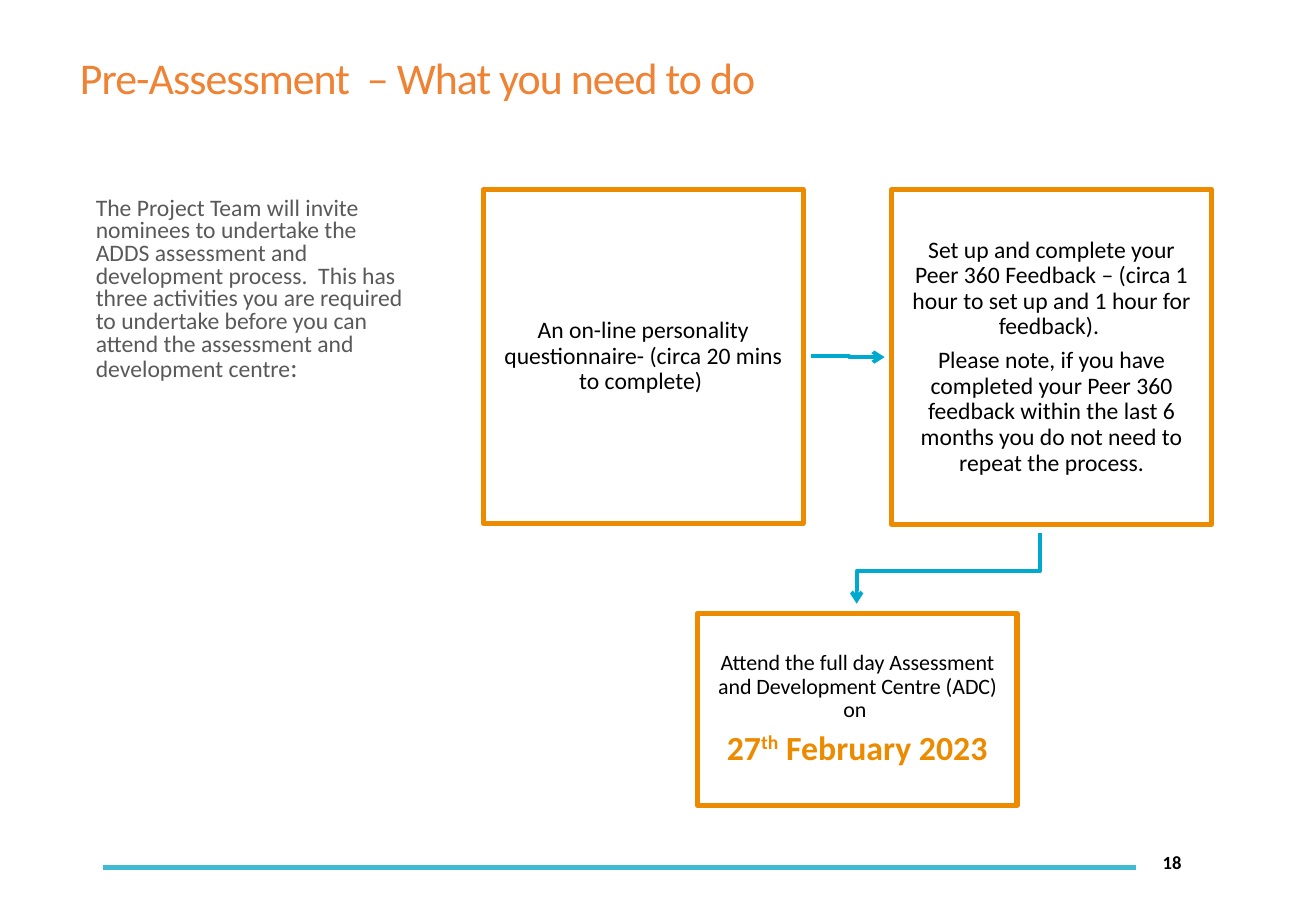
"""Build the pre-assessment slide with its three activity boxes."""
from dataclasses import dataclass

from lxml import etree
from pptx import Presentation, util as u
from pptx.dml.color import RGBColor
from pptx.enum import shapes, text
from pptx.oxml.ns import qn

PX = u.Inches(1) // 100
SLIDE_SIZE = (1083, 750)


@dataclass(frozen=True)
class Theme:
    font: str = "Calibri"
    title: str = "EF8233"
    body: str = "595959"
    ink: str = "000000"
    paper: str = "FFFFFF"
    border: str = "ED8B00"
    arrow: str = "00A9CE"
    rule: str = "40BAD2"
    title_size: int = 26
    date_size: int = 20
    colon_size: int = 16
    body_size: int = 14
    small_size: int = 13
    number_size: int = 11
    border_width: float = 3
    arrow_width: float = 2.25


THEME = Theme()
STYLES = {
    "title": dict(size=THEME.title_size, color=THEME.title, spc=-60),
    "body": dict(size=THEME.body_size, color=THEME.body),
    "colon": dict(size=THEME.colon_size, color=THEME.body),
    "step": dict(size=THEME.body_size, color=THEME.ink),
    "small": dict(size=THEME.small_size, color=THEME.ink),
    "date": dict(size=THEME.date_size, color=THEME.border, bold=True),
    "ordinal": dict(size=THEME.date_size, color=THEME.border, bold=True, baseline=30000),
    "number": dict(size=THEME.number_size, color=THEME.ink, bold=True),
}

TEXTS = [
    ((56, 40, 649, 47), "middle", 1,
     [[("Pre-Assessment  – What you need to do", "title")]]),
    ((69, 158, 280, 165), "top", 0.8,
     [[("The Project Team will invite nominees to undertake the ADDS assessment and "
        "development process.  This has three activities you are required to undertake "
        "before you can attend the assessment and development centre", "body"),
       (":", "colon")]]),
    ((947, 690, 136, 40), "middle", 1, [[("18", "number")]]),
]
STEP_WIDTH = 263
STEPS = [
    ((398, 156), 275,
     [[("An on-line personality questionnaire- (circa 20 mins to complete) ", "step")]]),
    ((734, 156), 276,
     [[("Set up and complete your Peer 360 Feedback – (circa 1 hour to set up and "
        "1 hour for feedback). ", "step")],
      [("Please note, if you have completed your Peer 360 feedback within the last "
        "6 months you do not need to repeat the process.", "step")]]),
    ((574, 505), 158,
     [[("Attend the full day Assessment and Development Centre (ADC) on ", "small")],
      [("27", "date"), ("th", "ordinal"), (" February 2023", "date")]]),
]
ARROWS = [
    [(667, 293), (699, 293), (699, 294), (728, 294)],
    [(856, 439), (856, 470), (705, 470), (705, 497)],
]
FOOTER_RULE = (85, 714, 935, 714)


def emu(lengths):
    return [length * PX for length in lengths]


def style_line(line, color, width):
    line.color.rgb = RGBColor.from_string(color)
    line.width = u.Pt(width)


def format_run(run, size, color, bold=False, **attributes):
    run.font.name = THEME.font
    run.font.size = u.Pt(size)
    run.font.bold = bold
    run.font.color.rgb = RGBColor.from_string(color)
    for name, value in attributes.items():
        run._r.get_or_add_rPr().set(name, str(value))


def write(frame, paragraphs, anchor, spacing, inset, align, after=0):
    frame.word_wrap = True
    frame.vertical_anchor = anchor
    frame.margin_left, frame.margin_top, frame.margin_right, frame.margin_bottom = emu(inset)
    for index, pieces in enumerate(paragraphs):
        paragraph = frame.add_paragraph() if index else frame.paragraphs[0]
        paragraph.alignment = align
        paragraph.line_spacing = spacing
        paragraph.space_after = u.Pt(after)
        for words, style in pieces:
            run = paragraph.add_run()
            run.text = words
            format_run(run, **STYLES[style])


def add_text(slide, box, anchor, spacing, paragraphs):
    shape = slide.shapes.add_textbox(*emu(box))
    write(shape.text_frame, paragraphs, text.MSO_ANCHOR[anchor.upper()], spacing,
          (10, 5, 10, 5), text.PP_ALIGN.LEFT)


def add_step(slide, corner, height, paragraphs):
    shape = slide.shapes.add_shape(
        shapes.MSO_SHAPE.RECTANGLE, *emu((*corner, STEP_WIDTH, height)))
    shape.shadow.inherit = False
    shape.fill.solid()
    shape.fill.fore_color.rgb = RGBColor.from_string(THEME.paper)
    style_line(shape.line, THEME.border, THEME.border_width)
    write(shape.text_frame, paragraphs, text.MSO_ANCHOR.MIDDLE, 0.9,
          (12, 12, 12, 12), text.PP_ALIGN.CENTER, after=5)


def add_arrow(slide, points):
    builder = slide.shapes.build_freeform(*points[0], scale=PX)
    builder.add_line_segments(points[1:], close=False)
    shape = builder.convert_to_shape()
    shape.shadow.inherit = False
    shape.fill.background()
    style_line(shape.line, THEME.arrow, THEME.arrow_width)
    outline = shape.element.spPr.find(qn("a:ln"))
    etree.SubElement(outline, qn("a:tailEnd"), type="arrow")


def add_rule(slide, ends):
    rule = slide.shapes.add_connector(shapes.MSO_CONNECTOR.STRAIGHT, *emu(ends))
    style_line(rule.line, THEME.rule, THEME.border_width)
    etree.SubElement(rule.element.spPr, qn("a:effectLst"))


def main():
    presentation = Presentation()
    presentation.slide_width, presentation.slide_height = emu(SLIDE_SIZE)
    slide = presentation.slides.add_slide(presentation.slide_layouts[6])
    add_rule(slide, FOOTER_RULE)
    for item in TEXTS:
        add_text(slide, *item)
    for step in STEPS:
        add_step(slide, *step)
    for points in ARROWS:
        add_arrow(slide, points)
    presentation.save("out.pptx")


if __name__ == "__main__":
    main()
